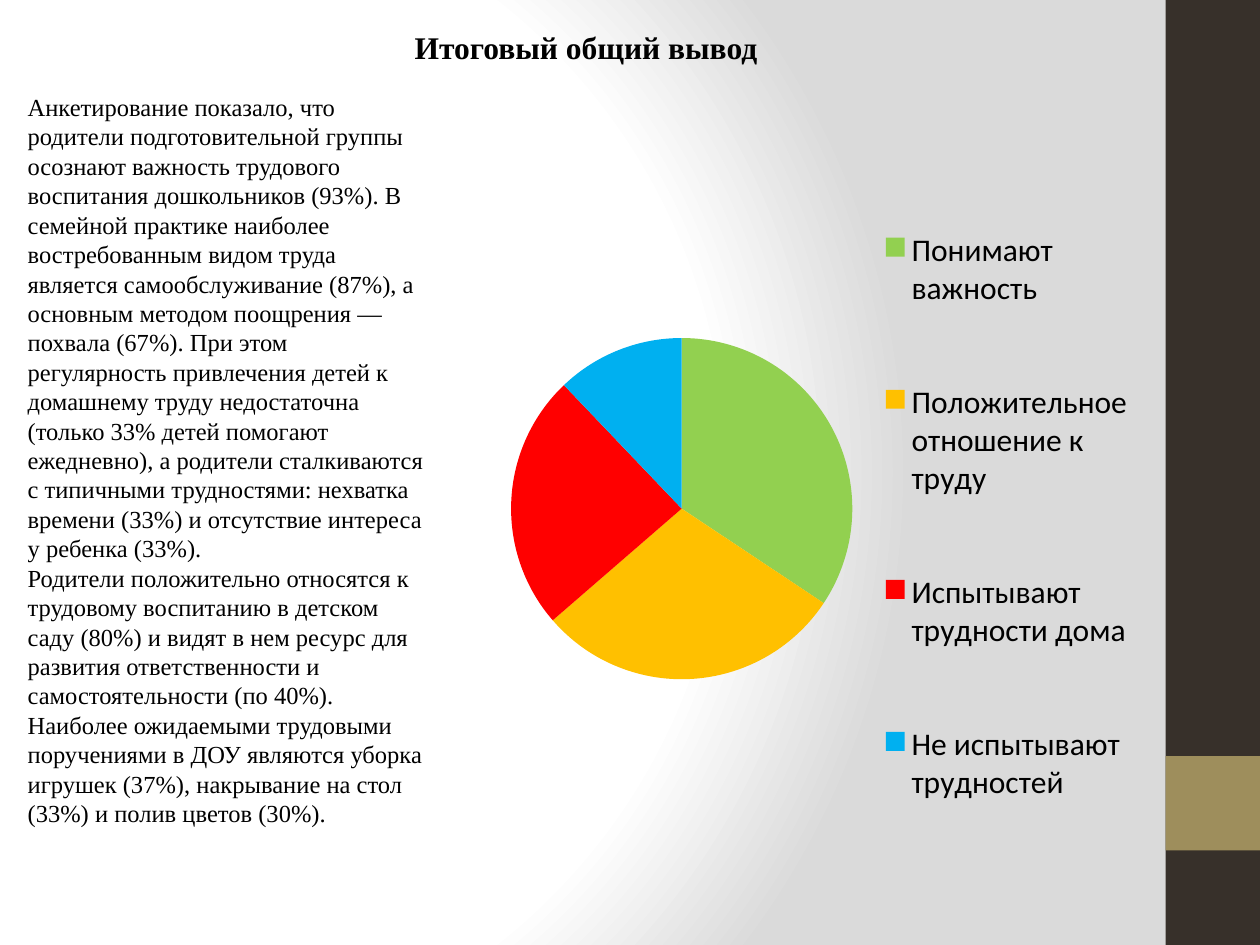
import pptx
import pptx.chart.data
import pptx.dml.color
import pptx.enum.chart
import pptx.enum.shapes
import pptx.enum.text
import pptx.oxml
import pptx.oxml.ns
import pptx.util

Pt = pptx.util.Pt
RGB = pptx.dml.color.RGBColor.from_string
COLORS = {
    "text": "000000", "band": "37302A", "accent": "9E8E5C",
    "center": "FFFFFF", "edge": "DADADA",
    "green": "92D050", "amber": "FFC000", "red": "FF0000", "blue": "00B0F0",
}
CONCLUSIONS = [
    "Анкетирование показало, что родители подготовительной группы осознают важность "
    "трудового воспитания дошкольников (93%). В семейной практике наиболее "
    "востребованным видом труда является самообслуживание (87%), а основным методом "
    "поощрения — похвала (67%). При этом регулярность привлечения детей к домашнему "
    "труду недостаточна (только 33% детей помогают ежедневно), а родители сталкиваются "
    "с типичными трудностями: нехватка времени (33%) и отсутствие интереса у ребенка (33%).",
    "Родители положительно относятся к трудовому воспитанию в детском саду (80%) и "
    "видят в нем ресурс для развития ответственности и самостоятельности (по 40%). "
    "Наиболее ожидаемыми трудовыми поручениями в ДОУ являются уборка игрушек (37%), "
    "накрывание на стол (33%) и полив цветов (30%).",
]
SLICES = [
    ("Понимают важность", 34, "green"),
    ("Положительное отношение к труду", 29, "amber"),
    ("Испытывают трудности дома", 24, "red"),
    ("Не испытывают трудностей", 12, "blue"),
]


def place(box, left, top, width, height):
    box.left, box.top, box.width, box.height = Pt(left), Pt(top), Pt(width), Pt(height)


def set_layout(element, position, target, x, y, width, height):
    for old in element.findall(pptx.oxml.ns.qn("c:layout")):
        element.remove(old)
    inner = '<c:layoutTarget val="inner"/>' if target else ""
    element.insert(position, pptx.oxml.parse_xml(
        f'<c:layout {pptx.oxml.ns.nsdecls("c")}><c:manualLayout>{inner}'
        '<c:xMode val="edge"/><c:yMode val="edge"/>'
        f'<c:x val="{x}"/><c:y val="{y}"/><c:w val="{width}"/><c:h val="{height}"/>'
        '</c:manualLayout></c:layout>'))


deck = pptx.Presentation()
deck.slide_width, deck.slide_height = Pt(720), Pt(540)
page = deck.slides.add_slide(deck.slide_layouts[1])

page.background.fill.solid()
solid = page.element.find(".//" + pptx.oxml.ns.qn("p:bgPr"))[0]
stops = "".join(
    f'<a:gs pos="{position * 1000}"><a:srgbClr val="{COLORS[name]}"/></a:gs>'
    for position, name in [(0, "center"), (75, "center"), (100, "edge")])
solid.getparent().replace(solid, pptx.oxml.parse_xml(
    f'<a:gradFill {pptx.oxml.ns.nsdecls("a")} rotWithShape="1"><a:gsLst>{stops}</a:gsLst>'
    '<a:path path="circle"><a:fillToRect l="20000" t="50000" r="100000" b="50000"/>'
    '</a:path></a:gradFill>'))

for top, height, color in [(0, 540, "band"), (432, 54, "accent")]:
    bar = page.shapes.add_shape(
        pptx.enum.shapes.MSO_SHAPE.RECTANGLE, Pt(666), Pt(top), Pt(54), Pt(height))
    bar.shadow.inherit = False
    bar.fill.solid()
    bar.fill.fore_color.rgb = RGB(COLORS[color])
    bar.line.fill.background()

title = page.shapes.title
place(title, 229.7, 12.2, 212.4, 29)
title.text_frame.text = "Итоговый общий вывод"
title.text_frame.word_wrap = False

body = page.placeholders[1]
place(body, 8.6, 49, 244, 479.5)
body.text_frame.text = "\n".join(CONCLUSIONS)
body.text_frame.word_wrap = True

for box, size in [(title, 18), (body, 14)]:
    frame = box.text_frame
    frame.auto_size = pptx.enum.text.MSO_AUTO_SIZE.NONE
    frame.vertical_anchor = pptx.enum.text.MSO_ANCHOR.TOP
    for paragraph in frame.paragraphs:
        paragraph.alignment = pptx.enum.text.PP_ALIGN.LEFT
        paragraph.space_before = Pt(0)
        if box is body:
            paragraph.line_spacing = Pt(16.8)
            properties = paragraph._p.get_or_add_pPr()
            properties.set("marL", "0")
            properties.set("indent", "0")
            properties.append(pptx.oxml.parse_xml(
                f'<a:buNone {pptx.oxml.ns.nsdecls("a")}/>'))
        paragraph.font.name = "Times New Roman"
        paragraph.font.size = Pt(size)
        paragraph.font.bold = box is title
        paragraph.font.color.rgb = RGB(COLORS["text"])

data = pptx.chart.data.CategoryChartData()
data.categories = [label for label, value, color in SLICES]
data.add_series("Series 1", [value for label, value, color in SLICES])
chart = page.shapes.add_chart(
    pptx.enum.chart.XL_CHART_TYPE.PIE, Pt(280.8), Pt(66.2), Pt(375), Pt(453.6), data).chart
chart.has_title = False
chart.font.name = "Calibri"
chart.font.size = Pt(18)
chart.font.color.rgb = RGB(COLORS["text"])
chart.has_legend = True
chart.legend.position = pptx.enum.chart.XL_LEGEND_POSITION.RIGHT
chart.legend.include_in_layout = False
plot = chart.plots[0]
plot.vary_by_categories = True
for index, (label, value, color) in enumerate(SLICES):
    fill = plot.series[0].points[index].format.fill
    fill.solid()
    fill.fore_color.rgb = RGB(COLORS[color])

plot_area = chart.element.find(".//" + pptx.oxml.ns.qn("c:plotArea"))
legend = chart.element.find(".//" + pptx.oxml.ns.qn("c:legend"))
set_layout(plot_area, 0, True, 0.03, 0.28, 0.52, 0.43)
set_layout(legend, 1, False, 0.58, 0.05, 0.41, 0.91)

deck.save("out.pptx")
